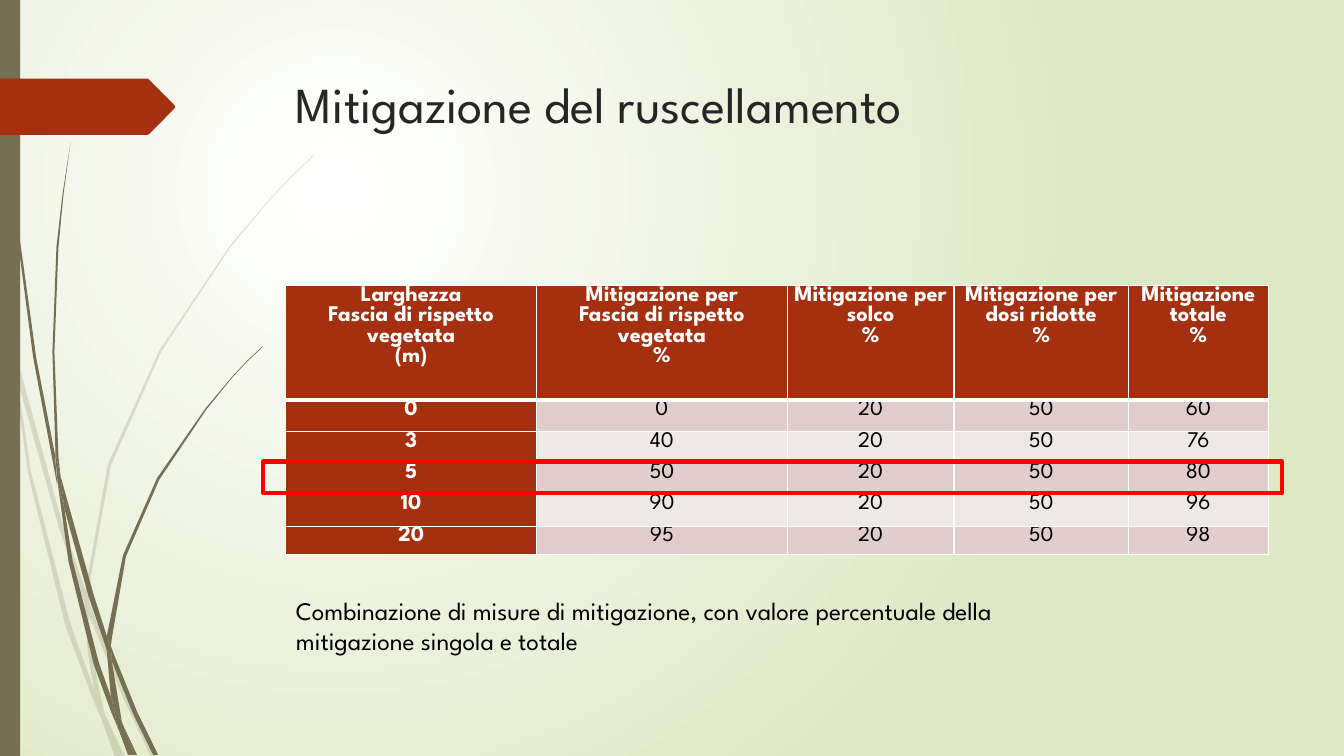
from dataclasses import dataclass

from lxml.etree import SubElement
from pptx import Presentation
from pptx.dml.color import RGBColor
from pptx.enum.shapes import MSO_SHAPE
from pptx.enum.text import PP_ALIGN
from pptx.oxml import parse_xml
from pptx.oxml.ns import nsdecls, qn
from pptx.util import Cm, Pt

Outline = tuple[tuple[float, float], ...]


@dataclass(frozen=True)
class Theme:
    font: str = "League Spartan"
    title_size: int = 36
    body_size: int = 18
    table_size: int = 16
    title: str = "262626"
    text: str = "000000"
    white: str = "FFFFFF"
    accent: str = "A53010"
    stem: str = "766F54"
    glow_edge: str = "DFE8C4"
    bands: tuple[str, str] = ("E1CDCC", "F0E8E7")
    highlight: str = "FF0000"


@dataclass(frozen=True)
class Grass:
    """A tuft of grass, made of blade outlines in stem units."""
    alpha: int
    blades: tuple[Outline, ...]


@dataclass(frozen=True)
class Column:
    heading: tuple[str, ...]
    width: float
    values: tuple[int, ...]


THEME = Theme()
STEM_UNIT = 2.54  # cm
ROW_HEIGHTS = (2.88, 0.79, 0.79, 0.79, 0.81, 0.71)

PALE_GRASS = Grass(20, (
    ((0.11, 3.5), (0.09, 3.22), (0, 2.82), (0, 2.99), (0.1, 3.44)),
    ((0.58, 5.22), (0.84, 5.99), (0.85, 5.86), (0.62, 5.2), (0.14, 3.45), (0.17, 3.76)),
    ((0.92, 6.07), (0.88, 5.96), (0.88, 6.1), (1.23, 6.94), (1.5, 7.51), (1.55, 7.51),
     (1.27, 6.92)),
    ((1.19, 7.51), (1.24, 7.51), (1.05, 7.11)),
    ((0.93, 6.83), (0.7, 6.19), (0.31, 4.69), (0.17, 3.76), (0.11, 3.5), (0.28, 4.7),
     (0.65, 6.21), (0.92, 6.93), (1.01, 7.14), (0.99, 7.07)),
    ((0.84, 5.99), (0.87, 6.46), (0.93, 6.83), (0.96, 6.92), (1.05, 7.11), (1.03, 7.06),
     (0.91, 6.46), (0.88, 6.1), (0.88, 6.08)),
    ((0.88, 5.84), (1.1, 4.62), (1.6, 3.49), (2.29, 2.45), (2.68, 1.98), (2.9, 1.75),
     (3.12, 1.54), (3.12, 1.53), (2.89, 1.75), (2.68, 1.97), (2.28, 2.44), (1.58, 3.48),
     (1.07, 4.61), (0.85, 5.84), (0.85, 5.86), (0.88, 5.96)),
    ((1.01, 7.14), (1.14, 7.51), (1.19, 7.51)),
    ((0.88, 6.08), (0.88, 6.1), (0.88, 5.96), (0.85, 5.86), (0.84, 5.99)),
    ((0.96, 6.92), (0.93, 6.83), (0.99, 7.07), (1.01, 7.14), (1.19, 7.51), (1.05, 7.11)),
))

DARK_GRASS = Grass(100, (
    ((0.07, 1.1), (0.17, 2.33), (0.33, 3.55), (0.56, 4.77), (0.57, 4.81), (0.55, 4.57),
     (0.55, 4.53), (0.36, 3.55), (0.19, 2.32), (0.08, 1.09), (0.05, 0.48), (0.04, 0),
     (0.03, 0), (0.04, 0.48)),
    ((0.88, 5.92), (1.06, 6.45), (1.06, 6.33), (1.06, 6.31), (0.93, 5.9), (0.6, 4.72),
     (0.64, 5.05)),
    ((1.13, 6.49), (1.1, 6.41), (1.11, 6.56), (1.32, 7.08), (1.52, 7.49), (1.57, 7.49),
     (1.36, 7.06)),
    ((1.1, 6.91), (0.98, 6.57), (0.72, 5.56), (0.64, 5.05), (0.57, 4.77), (0.68, 5.57),
     (0.93, 6.59), (1.11, 7.08), (1.17, 7.22), (1.16, 7.17)),
    ((0.6, 4.72), (0.58, 4.53), (0.54, 3.49), (0.58, 2.45), (0.63, 1.93), (0.7, 1.41),
     (0.62, 1.93), (0.56, 2.45), (0.52, 3.49), (0.55, 4.49)),
    ((1.33, 7.49), (1.36, 7.49), (1.22, 7.19)),
    ((0.57, 4.77), (0.64, 5.05), (0.6, 4.72), (0.55, 4.49), (0.55, 4.53)),
    ((1.11, 6.33), (1.25, 5.52), (1.58, 4.76), (2.05, 4.06), (2.31, 3.74), (2.45, 3.59),
     (2.61, 3.44), (2.6, 3.44), (2.45, 3.58), (2.31, 3.73), (2.04, 4.05), (1.56, 4.74),
     (1.22, 5.51), (1.06, 6.31), (1.1, 6.41)),
    ((1.17, 7.22), (1.27, 7.49), (1.31, 7.49)),
    ((1.06, 6.45), (1.1, 6.91), (1.16, 7.06), (1.22, 7.19), (1.21, 7.16), (1.11, 6.56),
     (1.09, 6.51)),
    ((1.06, 6.45), (1.09, 6.51), (1.11, 6.56), (1.1, 6.41), (1.06, 6.31), (1.06, 6.33)),
    ((1.16, 7.06), (1.1, 6.91), (1.16, 7.17), (1.17, 7.22), (1.3, 7.49), (1.33, 7.49),
     (1.22, 7.19)),
))

TAB_OUTLINE = ((0, 1.98), (3.71, 1.98), (3.76, 2.01), (4.39, 2.64), (4.42, 2.69),
               (4.39, 2.74), (3.76, 3.38), (3.71, 3.4), (0, 3.4))

COLUMNS = (
    Column(("Larghezza", "Fascia di rispetto vegetata", "(m)"), 6.32, (0, 3, 5, 10, 20)),
    Column(("Mitigazione per", "Fascia di rispetto vegetata", "%"), 6.32, (0, 40, 50, 90, 95)),
    Column(("Mitigazione per", "solco", "%"), 4.2, (20,) * 5),
    Column(("Mitigazione per", "dosi ridotte", "%"), 4.4, (50,) * 5),
    Column(("Mitigazione", "totale", "%"), 3.52, (60, 76, 80, 96, 98)),
)


def rgb(color: str) -> RGBColor:
    return RGBColor.from_string(color)


def write(tf, *lines: str, size: int, color: str = THEME.text, bold: bool = False,
          align=PP_ALIGN.LEFT) -> None:
    tf.word_wrap = True
    for i, line in enumerate(lines):
        p = tf.add_paragraph() if i else tf.paragraphs[0]
        p.alignment = align
        r = p.add_run()
        r.text = line
        r.font.name, r.font.size, r.font.bold = THEME.font, Pt(size), bold
        r.font.color.rgb = rgb(color)


def paint(sp, color: str, alpha: int = 100) -> None:
    sp.shadow.inherit = False
    sp.fill.solid()
    sp.fill.fore_color.rgb = rgb(color)
    sp.line.fill.background()
    if alpha < 100:
        clr = sp.element.spPr.find(f"{qn('a:solidFill')}/{qn('a:srgbClr')}")
        SubElement(clr, qn("a:alpha"), val=str(alpha * 1000))


def add_outline(shapes, outline: Outline, color: str, alpha: int = 100, unit: float = 1) -> None:
    (x, y), *rest = [(Cm(px * unit), Cm(py * unit)) for px, py in outline]
    builder = shapes.build_freeform(x, y)
    builder.add_line_segments(rest)
    paint(builder.convert_to_shape(), color, alpha)


def add_grass(s, grass: Grass) -> None:
    group = s.shapes.add_group_shape()
    for blade in grass.blades:
        add_outline(group.shapes, blade, THEME.stem, grass.alpha, STEM_UNIT)


def set_background(s) -> None:
    fill = s.background.fill
    fill.gradient()
    for stop, color, position in zip(fill.gradient_stops, (THEME.white, THEME.glow_edge), (0, 1)):
        stop.color.rgb, stop.position = rgb(color), position
    grad = s.element.find(f".//{qn('a:gradFill')}")
    grad.replace(grad.find(qn("a:lin")), parse_xml(
        f'<a:path {nsdecls("a")} path="circle">'
        '<a:fillToRect l="50000" t="50000" r="100000" b="100000"/></a:path>'))


def set_borders(cell, **widths: int) -> None:
    """Set white borders; keyword names are the sides L, R, T and B in that order."""
    for i, (side, width) in enumerate(widths.items()):
        cell._tc.get_or_add_tcPr().insert(i, parse_xml(
            f'<a:ln{side} {nsdecls("a")} w="{Pt(width)}"><a:solidFill>'
            f'<a:srgbClr val="{THEME.white}"/></a:solidFill></a:ln{side}>'))


def add_mitigation_table(s) -> None:
    width = sum(c.width for c in COLUMNS)
    table = s.shapes.add_table(len(ROW_HEIGHTS), len(COLUMNS), Cm(7.2), Cm(7.2),
                               Cm(width), Cm(sum(ROW_HEIGHTS))).table
    table.first_row = table.horz_banding = False
    for row, height in zip(table.rows, ROW_HEIGHTS):
        row.height = Cm(height)
    for j, column in enumerate(COLUMNS):
        table.columns[j].width = Cm(column.width)
        for i, lines in enumerate((column.heading, *((str(v),) for v in column.values))):
            cell = table.cell(i, j)
            strong = i == 0 or j == 0
            cell.margin_left = cell.margin_right = Cm(0.13)
            cell.margin_top = cell.margin_bottom = 0
            cell.fill.solid()
            cell.fill.fore_color.rgb = rgb(THEME.accent if strong else THEME.bands[(i - 1) % 2])
            set_borders(cell, L=1, R=1, T=3 if i == 1 else 1, B=3 if i == 0 else 1)
            write(cell.text_frame, *lines, size=THEME.table_size, bold=strong,
                  color=THEME.white if strong else THEME.text, align=PP_ALIGN.CENTER)


def main() -> None:
    prs = Presentation()
    prs.slide_width, prs.slide_height = Cm(33.87), Cm(19.05)
    s = prs.slides.add_slide(prs.slide_layouts[6])
    set_background(s)
    for grass in (PALE_GRASS, DARK_GRASS):
        add_grass(s, grass)
    paint(s.shapes.add_shape(MSO_SHAPE.RECTANGLE, 0, 0, Cm(0.51), prs.slide_height), THEME.stem)
    add_outline(s.shapes, TAB_OUTLINE, THEME.accent)

    title = s.shapes.add_textbox(Cm(7.21), Cm(1.73), Cm(24.77), Cm(3.56))
    write(title.text_frame, "Mitigazione del ruscellamento",
          size=THEME.title_size, color=THEME.title)
    add_mitigation_table(s)
    caption = s.shapes.add_textbox(Cm(7.21), Cm(14.88), Cm(24.77), Cm(1.8))
    write(caption.text_frame,
          "Combinazione di misure di mitigazione, con valore percentuale della",
          "mitigazione singola e totale", size=THEME.body_size)

    frame = s.shapes.add_shape(MSO_SHAPE.RECTANGLE, Cm(6.63), Cm(11.63), Cm(25.68), Cm(0.79))
    frame.shadow.inherit = False
    frame.fill.background()
    frame.line.color.rgb, frame.line.width = rgb(THEME.highlight), Pt(3)
    prs.save("out.pptx")


if __name__ == "__main__":
    main()
